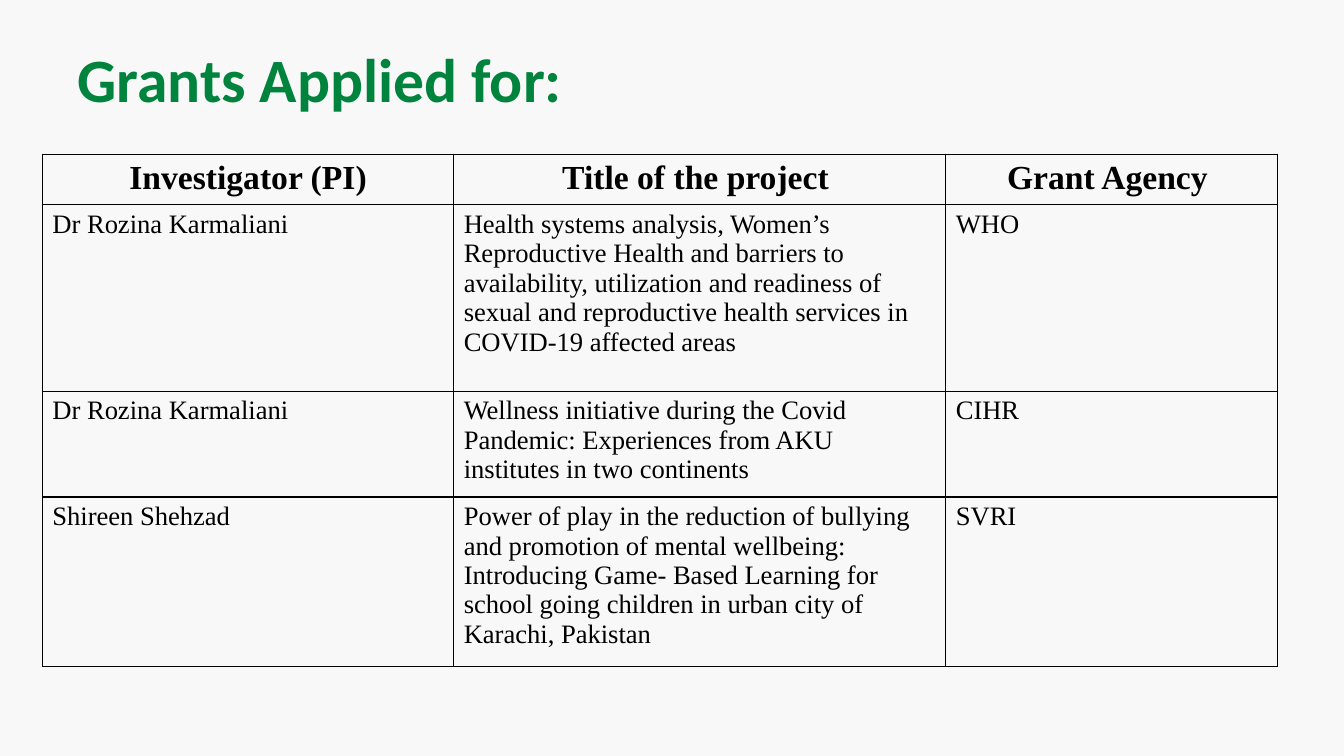
from pptx import Presentation
from pptx.dml.color import RGBColor
from pptx.enum.text import MSO_ANCHOR as Anchor, PP_ALIGN as Align
from pptx.oxml import parse_xml
from pptx.oxml.ns import nsdecls
from pptx.util import Inches, Pt

COLORS = {"background": "F8F8F8", "heading": "00843D", "ink": "000000"}

COLUMN_WIDTHS = [4.08, 4.88, 3.29]
ROW_HEIGHTS = [0.47, 1.85, 0.97, 1.56]
GRANTS = [
    ("Investigator (PI)", "Title of the project ", "Grant Agency "),
    ("Dr Rozina Karmaliani",
     "Health systems analysis, Women’s Reproductive Health and barriers to "
     "availability, utilization and readiness of sexual and reproductive "
     "health services in COVID-19 affected areas",
     "WHO"),
    ("Dr Rozina Karmaliani",
     "Wellness initiative during the Covid Pandemic: Experiences from AKU "
     "institutes in two continents",
     "CIHR"),
    ("Shireen Shehzad",
     "Power of play in the reduction of bullying and promotion of mental "
     "wellbeing: Introducing Game- Based Learning for school going children "
     "in urban city of Karachi, Pakistan",
     "SVRI"),
]


def write_text(frame, text, size, font="Times New Roman", color="ink",
               bold=False, align=Align.LEFT):
    frame.word_wrap = True
    paragraph = frame.paragraphs[0]
    paragraph.alignment = align
    run = paragraph.add_run()
    run.text = text
    run.font.name = font
    run.font.size = Pt(size)
    run.font.bold = bold
    run.font.color.rgb = RGBColor.from_string(COLORS[color])


def add_heading(slide, text):
    heading = slide.shapes.add_textbox(
        Inches(0.67), Inches(0.3), Inches(12), Inches(0.95))
    heading.text_frame.vertical_anchor = Anchor.MIDDLE
    write_text(heading.text_frame, text, 44, font="Calibri",
               color="heading", bold=True)


def add_borders(cell, width=Pt(1)):
    properties = cell._tc.get_or_add_tcPr()
    for position, side in enumerate(("lnL", "lnR", "lnT", "lnB")):
        properties.insert(position, parse_xml(
            f'<a:{side} {nsdecls("a")} w="{int(width)}"><a:solidFill>'
            f'<a:srgbClr val="{COLORS["ink"]}"/></a:solidFill></a:{side}>'))


def add_grants_table(slide):
    table = slide.shapes.add_table(
        len(GRANTS), len(COLUMN_WIDTHS), Inches(0.42), Inches(1.53),
        Inches(sum(COLUMN_WIDTHS)), Inches(sum(ROW_HEIGHTS))).table
    table.horz_banding = False
    for column, width in zip(table.columns, COLUMN_WIDTHS):
        column.width = Inches(width)
    for row, height, grant in zip(table.rows, ROW_HEIGHTS, GRANTS):
        row.height = Inches(height)
        is_header = grant is GRANTS[0]
        for cell, text in zip(row.cells, grant):
            cell.fill.background()
            add_borders(cell)
            write_text(cell.text_frame, text, 24 if is_header else 19,
                       bold=is_header,
                       align=Align.CENTER if is_header else Align.LEFT)


def main():
    deck = Presentation()
    deck.slide_width, deck.slide_height = Inches(13.33), Inches(7.5)
    slide = deck.slides.add_slide(deck.slide_layouts[6])
    backdrop = slide.background.fill
    backdrop.solid()
    backdrop.fore_color.rgb = RGBColor.from_string(COLORS["background"])
    add_heading(slide, "Grants Applied for:")
    add_grants_table(slide)
    deck.save("out.pptx")


if __name__ == "__main__":
    main()
